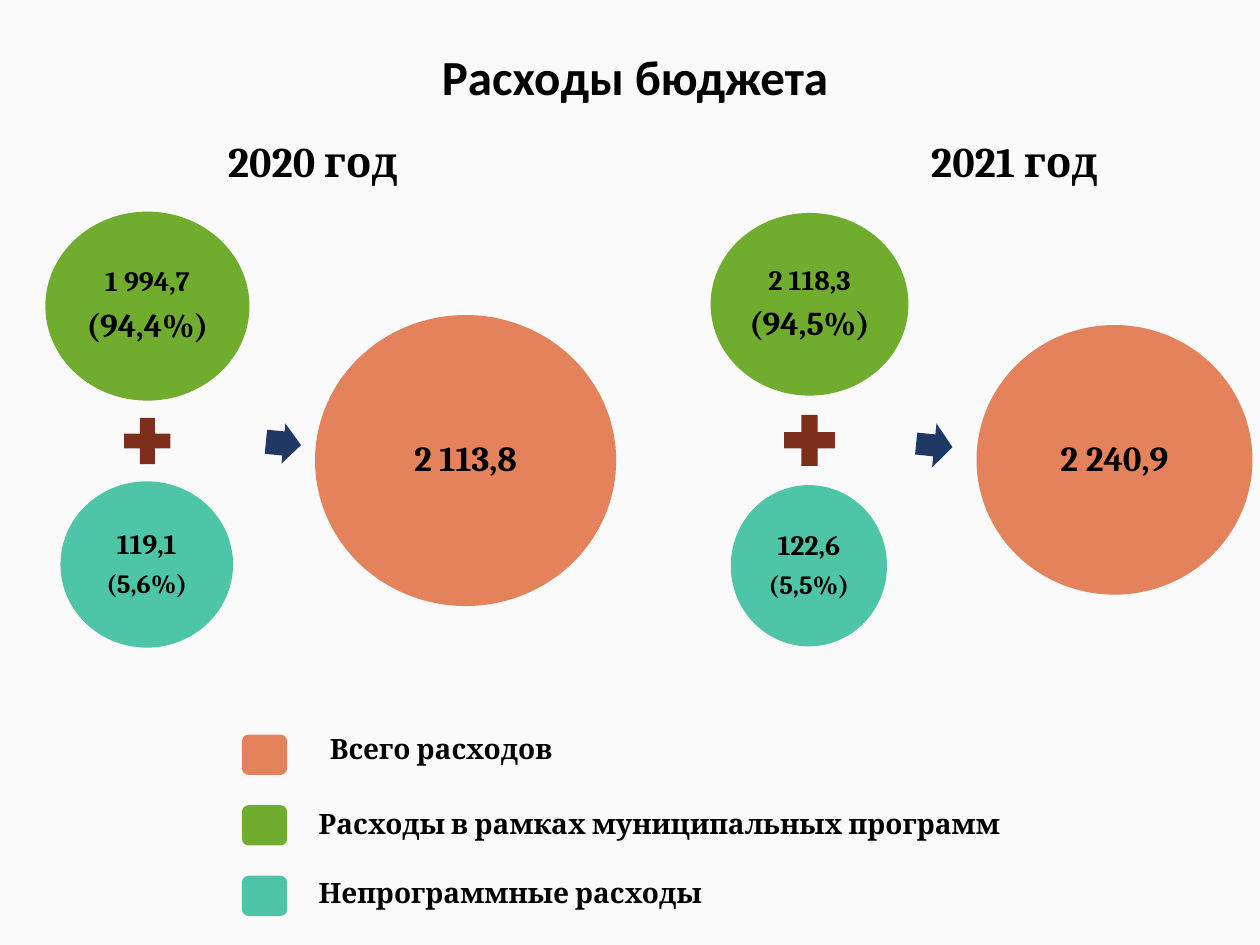
import pptx
import pptx.util
import pptx.dml.color
import pptx.enum.shapes
import pptx.enum.text

Inches = pptx.util.Inches
Pt = pptx.util.Pt
SHAPE = pptx.enum.shapes.MSO_SHAPE
ALIGN = pptx.enum.text.PP_ALIGN
ANCHOR = pptx.enum.text.MSO_ANCHOR
AUTO_SIZE = pptx.enum.text.MSO_AUTO_SIZE

COLORS = {
    "background": "FAFAFA",
    "text": "000000",
    "total": "E3825B",
    "programme": "70AC2E",
    "other": "4FC5A8",
    "plus": "7E2F1C",
    "arrow": "203864",
}
CENTERED = {"alignment": ALIGN.CENTER, "line_spacing": 0.9}
IN_CIRCLE = {**CENTERED, "space_after": Pt(6)}


def color(name):
    return pptx.dml.color.RGBColor.from_string(COLORS[name])


def set_format(target, values):
    for name, value in values.items():
        setattr(target, name, value)


class BudgetSlide:
    """Holds the text style and the current slide."""

    def __init__(self, deck, font="Cambria"):
        self.font = font
        self.slide = deck.slides.add_slide(deck.slide_layouts[6])
        fill = self.slide.background.fill
        fill.solid()
        fill.fore_color.rgb = color("background")

    def add_lines(self, frame, lines, paragraph_format, font=None):
        for index, (text, size) in enumerate(lines):
            paragraph = frame.paragraphs[0] if index == 0 else frame.add_paragraph()
            set_format(paragraph, paragraph_format)
            run = paragraph.add_run()
            run.text = text
            set_format(run.font, {"name": font or self.font, "size": Pt(size), "bold": True})
            run.font.color.rgb = color("text")

    def label(self, box, text, size, frame_format, paragraph_format=None, font=None):
        frame = self.slide.shapes.add_textbox(*map(Inches, box)).text_frame
        set_format(frame, frame_format)
        self.add_lines(frame, [(text, size)], paragraph_format or {}, font)

    def figure(self, kind, box, fill, rotation=0):
        shape = self.slide.shapes.add_shape(kind, *map(Inches, box))
        shape.shadow.inherit = False
        shape.fill.solid()
        shape.fill.fore_color.rgb = color(fill)
        shape.line.fill.background()
        shape.rotation = rotation
        return shape

    def circle(self, box, fill, lines, inset=0.02):
        frame = self.figure(SHAPE.OVAL, box, fill).text_frame
        margins = ("margin_left", "margin_top", "margin_right", "margin_bottom")
        set_format(frame, dict.fromkeys(margins, Inches(inset)))
        set_format(frame, {"word_wrap": True, "vertical_anchor": ANCHOR.MIDDLE})
        self.add_lines(frame, lines, IN_CIRCLE)

    def year(self, heading, programme, other, total, plus, arrow):
        box, text = heading
        self.label(box, text, 24, {"word_wrap": False, "auto_size": AUTO_SIZE.SHAPE_TO_FIT_TEXT})
        box, amount, share = programme
        self.circle(box, "programme", [(amount, 16), (share, 19)])
        self.figure(SHAPE.MATH_PLUS, plus, "plus")
        box, amount, share = other
        self.circle(box, "other", [(amount, 16), (share, 15)])
        box, rotation, shaft = arrow
        self.figure(SHAPE.RIGHT_ARROW, box, "arrow", rotation).adjustments[0] = shaft
        box, amount = total
        self.circle(box, "total", [(amount, 20)], inset=0.03)

    def legend(self, entries, left=1.92, top=5.83, step=0.56):
        for row, (fill, box, text) in enumerate(entries):
            self.figure(SHAPE.ROUNDED_RECTANGLE, (left, top + row * step, 0.36, 0.32), fill)
            self.label(box, text, 16,
                       {"word_wrap": True, "auto_size": AUTO_SIZE.SHAPE_TO_FIT_TEXT})


def main():
    deck = pptx.Presentation()
    set_format(deck, {"slide_width": Inches(10), "slide_height": Inches(7.5)})
    budget = BudgetSlide(deck)

    # Title
    budget.label((0.73, 0.2, 8.62, 0.87), "Расходы бюджета", 28,
                 {"word_wrap": True, "vertical_anchor": ANCHOR.MIDDLE}, CENTERED, "Calibri")

    # Programme + other spending = total, for each year
    budget.year(
        heading=((1.71, 1.03, 1.61, 0.5), "2020 год"),
        programme=((0.36, 1.68, 1.62, 1.5), "1 994,7", "(94,4%)"),
        other=((0.48, 3.82, 1.37, 1.32), "119,1", "(5,6%)"),
        total=((2.5, 2.5, 2.39, 2.31), "2 113,8"),
        plus=(0.92, 3.25, 0.5, 0.5),
        arrow=((2.11, 3.36, 0.28, 0.32), 5.5, 0.6),
    )
    budget.year(
        heading=((7.29, 1.03, 1.61, 0.5), "2021 год"),
        programme=((5.64, 1.69, 1.57, 1.45), "2 118,3", "(94,5%)"),
        other=((5.8, 3.85, 1.24, 1.28), "122,6", "(5,5%)"),
        total=((7.75, 2.58, 2.19, 2.14), "2 240,9"),
        plus=(6.15, 3.22, 0.55, 0.55),
        arrow=((7.27, 3.36, 0.29, 0.35), 5.7, 0.5),
    )

    # Legend
    budget.legend([
        ("total", (2.52, 5.76, 2.23, 0.37), "Всего расходов"),
        ("programme", (2.43, 6.35, 5.91, 0.37), "Расходы в рамках муниципальных программ"),
        ("other", (2.43, 6.9, 3.64, 0.37), "Непрограммные расходы"),
    ])

    deck.save("out.pptx")


if __name__ == "__main__":
    main()
